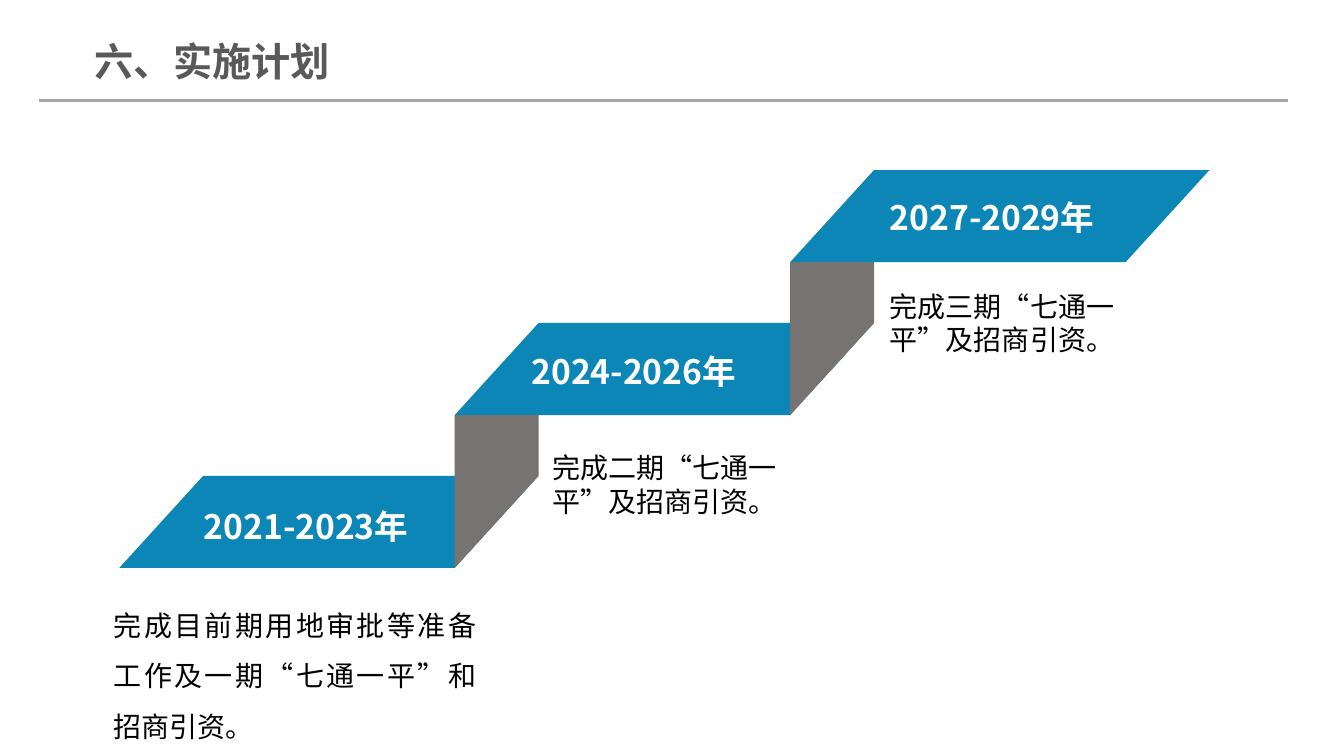
from lxml import etree
from pptx import Presentation
from pptx.dml.color import RGBColor
from pptx.enum import shapes, text
from pptx.oxml.ns import qn
from pptx.util import Pt

BLUE = RGBColor(0x0C, 0x86, 0xB6)
STONE = RGBColor(0x77, 0x73, 0x70)
RULE = RGBColor(0xA6, 0xA6, 0xA6)
TITLE = RGBColor(0x59, 0x59, 0x59)
WHITE = RGBColor(0xFF, 0xFF, 0xFF)
BLACK = RGBColor(0, 0, 0)
FONT = "Noto Sans CJK SC"


def write(sp, box, words, size, color, bold=False, wrap=True, **para):
    """Place a text shape and fill it with one formatted paragraph."""
    sp.left, sp.top, sp.width, sp.height = [Pt(v) for v in box]
    tf = sp.text_frame
    tf.word_wrap = wrap
    tf.auto_size = text.MSO_AUTO_SIZE.SHAPE_TO_FIT_TEXT
    tf.vertical_anchor = text.MSO_ANCHOR.TOP
    p = tf.paragraphs[0]
    for name, value in {"alignment": text.PP_ALIGN.LEFT, **para}.items():
        setattr(p, name, value)
    r = p.add_run()
    r.text = words
    for name, value in {"name": FONT, "size": Pt(size), "bold": bold}.items():
        setattr(r.font, name, value)
    r.font.color.rgb = color
    ea = etree.SubElement(r.font._element, qn("a:ea"))
    ea.set("typeface", FONT)


def paint(sp, color):
    sp.fill.solid()
    sp.fill.fore_color.rgb = color
    sp.line.fill.background()
    sp.shadow.inherit = False


prs = Presentation()
prs.slide_width, prs.slide_height = Pt(960), Pt(540)
s = prs.slides.add_slide(prs.slide_layouts[5])

# Title and rule
write(s.shapes.title, (60.5, 23, 333.4, 41), "六、实施计划", 28, TITLE, True)
rule = s.shapes.add_connector(shapes.MSO_CONNECTOR.STRAIGHT,
                              Pt(28), Pt(72), Pt(920), Pt(72))
rule.line.color.rgb = RULE
rule.line.width = Pt(2.25)
etree.SubElement(rule._element.spPr, qn("a:effectLst"))

# Staircase: each step rises to the right of the one before
LEFT, TOP, STEP_W, STEP_H = 85.2, 339.9, 299.5, 65.8
RUN, RISE = 239.6, 109.2
steps = [(LEFT + i * RUN, TOP - i * RISE) for i in range(3)]
for x, y in steps:
    sp = s.shapes.add_shape(shapes.MSO_SHAPE.FLOWCHART_DATA,
                            Pt(x), Pt(y), Pt(STEP_W), Pt(STEP_H))
    paint(sp, BLUE)

# Risers hang from the left end of each upper step
RISER_W = STEP_W - RUN
for x, y in steps[1:]:
    top = y + STEP_H
    fold = top + RISE - STEP_H
    fb = s.shapes.build_freeform(Pt(x), Pt(top + RISE))
    fb.add_line_segments([(Pt(x), Pt(top)), (Pt(x + RISER_W), Pt(top)),
                          (Pt(x + RISER_W), Pt(fold))])
    paint(fb.convert_to_shape(), STONE)

# Years on the steps
years = [("2021-2023年", 138.5, 358), ("2024-2026年", 372.5, 247),
         ("2027-2029年", 628.5, 137.2)]
for words, x, y in years:
    sp = s.shapes.add_textbox(0, 0, 0, 0)
    write(sp, (x, y, 168.5, 33), words, 24, WHITE, True, False)

# Tasks below the steps
tasks = [
    ("完成目前期用地审批等准备工作及一期“七通一平”和招商引资。", (74.2, 419, 273, 112.3),
     {"alignment": text.PP_ALIGN.JUSTIFY, "line_spacing": 1.5}),
    ("完成二期“七通一平”及招商引资。", (387.4, 318.2, 216, 55.4), {}),
    ("完成三期“七通一平”及招商引资。", (628.5, 203, 216.7, 55.4), {}),
]
for words, box, para in tasks:
    write(s.shapes.add_textbox(0, 0, 0, 0), box, words, 20, BLACK, **para)

prs.save("out.pptx")
